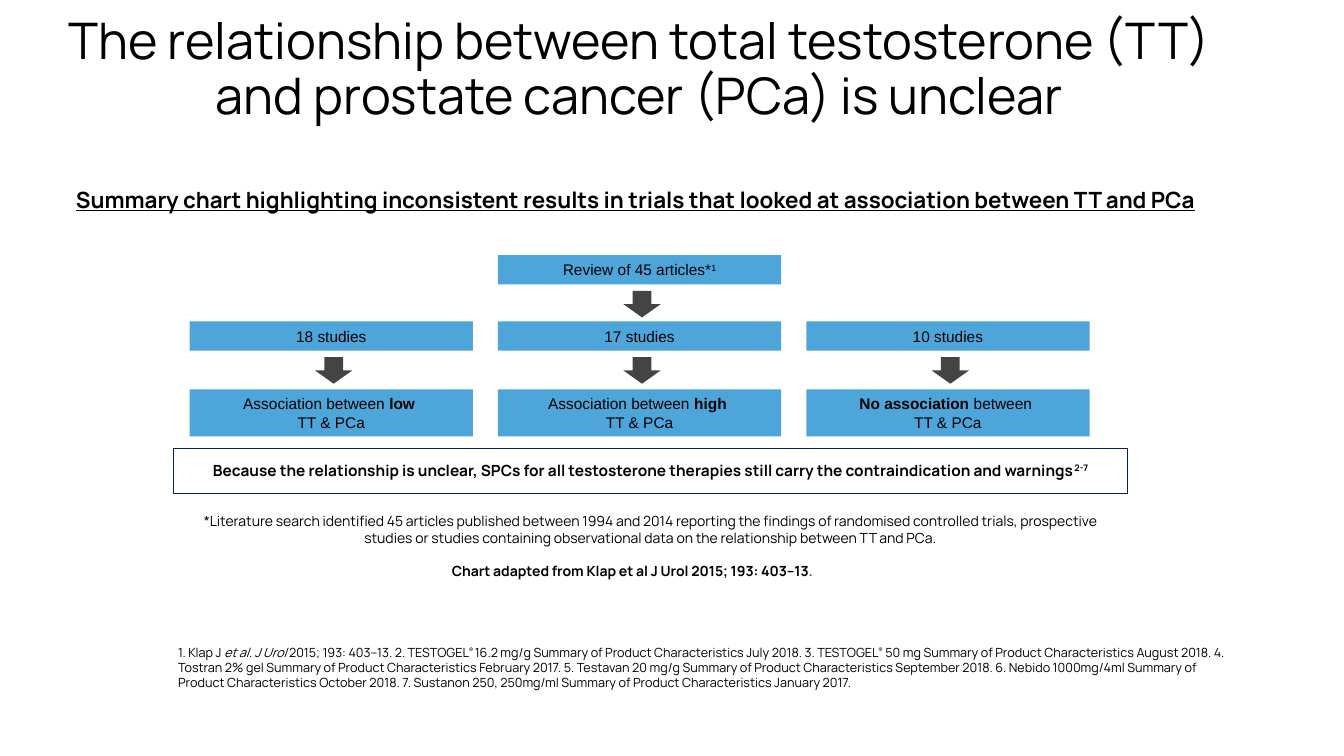
from dataclasses import dataclass

from pptx import Presentation
from pptx.dml.color import RGBColor
from pptx.enum.shapes import MSO_SHAPE
from pptx.enum.text import MSO_ANCHOR, PP_ALIGN
from pptx.util import Cm, Pt


@dataclass(frozen=True)
class Theme:
    text: RGBColor = RGBColor(0x00, 0x00, 0x00)
    box: RGBColor = RGBColor(0x4E, 0xA5, 0xDA)
    arrow: RGBColor = RGBColor(0x45, 0x44, 0x44)
    border: RGBColor = RGBColor(0x00, 0x20, 0x60)
    accent: RGBColor = RGBColor(0x00, 0x6E, 0xAB)
    body_font: str = "Manrope"
    box_font: str = "Arial"
    title_size: int = 36
    heading_size: int = 16
    box_size: int = 11
    note_size: int = 10
    reference_size: int = 9


class FlowSlide:
    def __init__(self, presentation, theme):
        self.theme = theme
        self.slide = presentation.slides.add_slide(presentation.slide_layouts[6])

    def fill_text(self, shape, paragraphs, size, font=None, bold=False, underline=None,
                  align=PP_ALIGN.CENTER, anchor=MSO_ANCHOR.MIDDLE, spacing=None):
        frame = shape.text_frame
        frame.word_wrap = True
        frame.vertical_anchor = anchor
        for index, runs in enumerate(paragraphs):
            paragraph = frame.add_paragraph() if index else frame.paragraphs[0]
            paragraph.alignment = align
            paragraph.line_spacing = spacing
            paragraph.font.name = font or self.theme.body_font
            paragraph.font.size = Pt(size)
            paragraph.font.bold = bold
            paragraph.font.underline = underline
            paragraph.font.color.rgb = self.theme.text
            for text, style in runs:
                run = paragraph.add_run()
                run.text = text
                if style == "bold":
                    run.font.bold = True
                elif style == "italic":
                    run.font.italic = True
                elif style == "accent":
                    run.font.color.rgb = self.theme.accent
                elif style == "superscript":
                    run.font._element.set("baseline", "30000")

    def text(self, left, top, width, height, runs, size, **style):
        shape = self.slide.shapes.add_textbox(Cm(left), Cm(top), Cm(width), Cm(height))
        self.fill_text(shape, [runs], size, **style)
        return shape

    def filled(self, kind, left, top, width, height, color):
        shape = self.slide.shapes.add_shape(kind, Cm(left), Cm(top), Cm(width), Cm(height))
        shape.shadow.inherit = False
        shape.fill.solid()
        shape.fill.fore_color.rgb = color
        shape.line.fill.background()
        return shape

    def box(self, left, top, height, paragraphs):
        shape = self.filled(MSO_SHAPE.RECTANGLE, left, top, BOX_WIDTH, height, self.theme.box)
        self.fill_text(shape, paragraphs, self.theme.box_size, self.theme.box_font)

    def arrow(self, left, top):
        self.filled(MSO_SHAPE.DOWN_ARROW, left, top, 0.94, 0.67, self.theme.arrow)

    def framed(self, left, top, width, height, runs, size, **style):
        shape = self.text(left, top, width, height, runs, size, **style)
        shape.line.color.rgb = self.theme.border
        shape.line.width = Pt(0.75)
        shape.text_frame.paragraphs[0].space_after = Pt(6)


BOX_WIDTH = 7.14
COLUMN_LEFT = 4.78
COLUMN_PITCH = 7.77
ARROW_OFFSET = 3.16

OUTCOMES = [
    ("18 studies", [("Association between ", None), ("low ", "bold")]),
    ("17 studies", [("Association between ", None), ("high ", "bold")]),
    ("10 studies", [("No association ", "bold"), ("between ", None)]),
]

REFERENCES = [
    ("1. Klap J ", None),
    ("et al. J Urol ", "italic"),
    ("2015; 193: 403–13. 2. TESTOGEL", None),
    ("® ", "superscript"),
    ("16.2 mg/g Summary of Product Characteristics July 2018. 3. TESTOGEL", None),
    ("®", "superscript"),
    (" 50 mg Summary of Product Characteristics August 2018. "
     "4. Tostran 2% gel Summary of Product Characteristics February 2017. "
     "5. Testavan 20 mg/g Summary of Product Characteristics September 2018. "
     "6. Nebido 1000mg/4ml Summary of Product Characteristics October 2018. "
     "7. Sustanon 250, 250mg/ml Summary of Product Characteristics January 2017.", None),
]


def main():
    presentation = Presentation()
    presentation.slide_width = Cm(33.87)
    presentation.slide_height = Cm(19.05)
    theme = Theme()
    page = FlowSlide(presentation, theme)

    page.text(0.81, 0.84, 30.61, 1.88,
              [("The relationship between total testosterone (TT) "
                "and prostate cancer (PCa) is unclear", None)],
              theme.title_size, spacing=0.9)
    page.text(1.02, 4.57, 30, 0.94,
              [("Summary chart highlighting inconsistent results in trials "
                "that looked at association between TT and PCa", None)],
              theme.heading_size, bold=True, underline=True)

    middle = COLUMN_LEFT + COLUMN_PITCH
    page.box(middle, 6.43, 0.74, [[("Review of 45 articles*", None), ("1", "superscript")]])
    page.arrow(middle + ARROW_OFFSET, 7.33)
    for column, (studies, finding) in enumerate(OUTCOMES):
        left = COLUMN_LEFT + column * COLUMN_PITCH
        page.box(left, 8.1, 0.74, [[(studies, None)]])
        page.arrow(left + ARROW_OFFSET, 9)
        page.box(left, 9.81, 1.19, [finding, [("TT & PCa", None)]])

    page.framed(4.37, 11.3, 24.05, 1.14,
                [("Because the relationship is unclear, SPCs for all testosterone therapies "
                  "still carry the contraindication and warnings", None),
                 ("2-7", "superscript")],
                theme.box_size, bold=True, spacing=0.9)
    page.text(4.6, 12.85, 23.57, 0.97,
              [("*Literature search identified 45 articles published between 1994 and 2014 "
                "reporting the findings of randomised controlled trials, prospective studies "
                "or studies containing observational data on the relationship "
                "between TT and PCa.", None)],
              theme.note_size)
    page.text(9.3, 14.05, 13.34, 0.69,
              [("Chart adapted from Klap et al J Urol 2015; 193: 403–13", None),
               (". ", "accent")],
              theme.note_size, bold=True)
    page.text(4.24, 16.1, 27.38, 1.42, REFERENCES, theme.reference_size,
              align=PP_ALIGN.LEFT, anchor=MSO_ANCHOR.BOTTOM)

    presentation.save("out.pptx")


if __name__ == "__main__":
    main()
